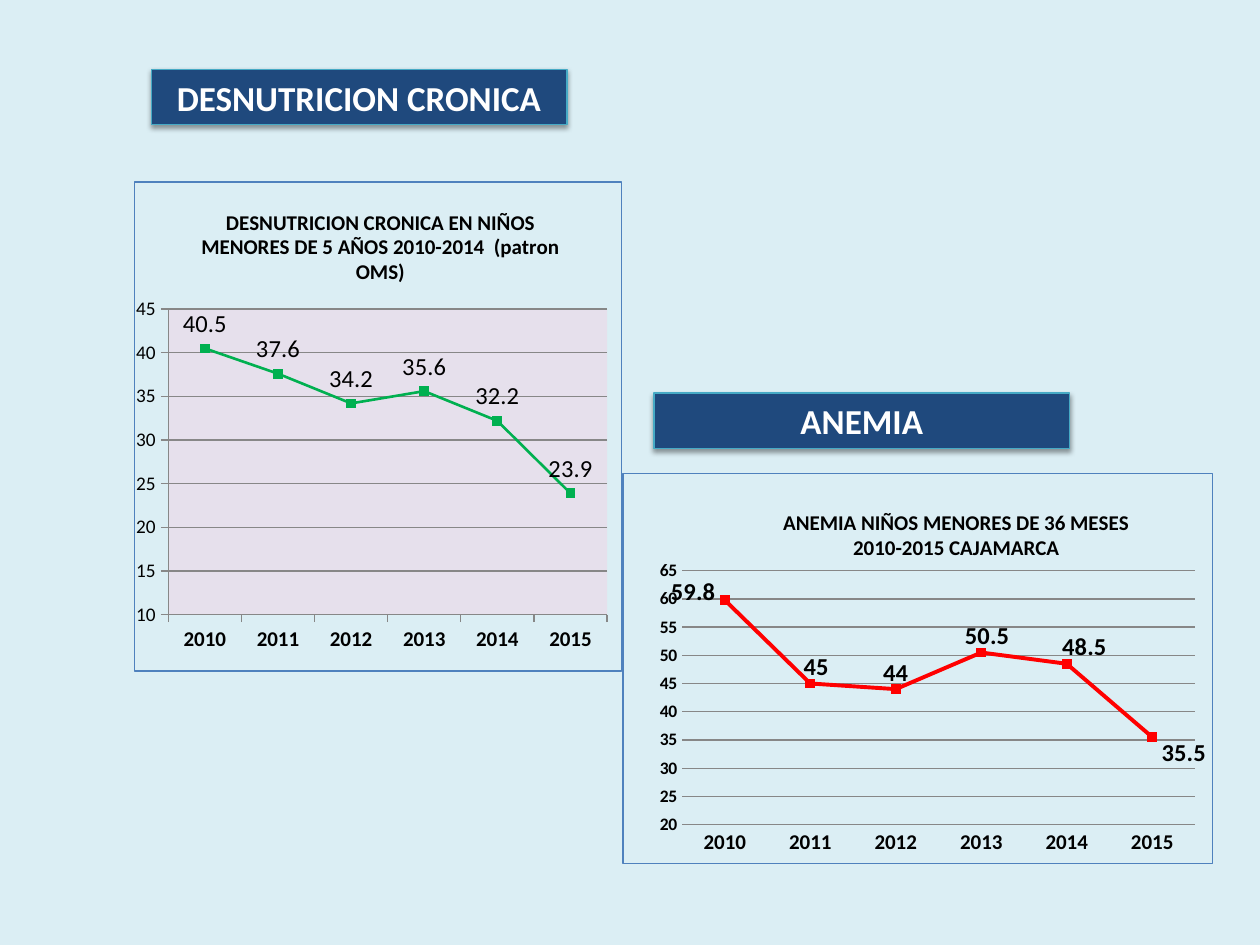
from lxml import etree
from pptx import Presentation
from pptx.chart.data import CategoryChartData
from pptx.dml.color import RGBColor
from pptx.enum.chart import (XL_CHART_TYPE, XL_LABEL_POSITION, XL_MARKER_STYLE,
                             XL_TICK_MARK)
from pptx.enum.shapes import MSO_SHAPE
from pptx.enum.text import MSO_ANCHOR, PP_ALIGN
from pptx.oxml import parse_xml
from pptx.oxml.ns import qn
from pptx.util import Inches, Pt

LINE = XL_CHART_TYPE.LINE_MARKERS
ABOVE, LEFT, RIGHT = (XL_LABEL_POSITION.ABOVE, XL_LABEL_POSITION.LEFT,
                      XL_LABEL_POSITION.RIGHT)
SQUARE = XL_MARKER_STYLE.SQUARE
OUT, NONE = XL_TICK_MARK.OUTSIDE, XL_TICK_MARK.NONE

PALE = RGBColor(0xDB, 0xEE, 0xF4)
LILAC = RGBColor(0xE6, 0xE0, 0xEC)
NAVY = RGBColor(0x1F, 0x49, 0x7D)
TEAL = RGBColor(0x46, 0xAA, 0xC5)
BLUE = RGBColor(0x4F, 0x81, 0xBD)
GREY = RGBColor(0x87, 0x87, 0x87)
GREEN = RGBColor(0x00, 0xB0, 0x50)
RED = RGBColor(0xFF, 0x00, 0x00)
BLACK = RGBColor(0, 0, 0)
WHITE = RGBColor(0xFF, 0xFF, 0xFF)

FONT = "Calibri"
YEARS = [str(year) for year in range(2010, 2016)]
SPACES = ('xmlns:a="http://schemas.openxmlformats.org/drawingml/2006/main" '
          'xmlns:c="http://schemas.openxmlformats.org/drawingml/2006/chart"')


def style(font, size, color=BLACK, bold=False):
    font.name, font.size, font.bold = FONT, Pt(size), bold
    font.color.rgb = color


def set_layout(parent, index, **parts):
    """Give a chart part a manual layout, in fractions of the chart."""
    old = parent.find(qn("c:layout"))
    if old is not None:
        parent.remove(old)
    layout = parse_xml(f"<c:layout {SPACES}><c:manualLayout/></c:layout>")
    for name, value in parts.items():
        etree.SubElement(layout[0], qn(f"c:{name}")).set("val", str(value))
    parent.insert(index, layout)


def paint(fill, line=None):
    """Return chart shape properties with an optional border."""
    border = (f'<a:ln w="{Pt(0.75)}"><a:solidFill><a:srgbClr val="{line}"/>'
              '</a:solidFill></a:ln>') if line else ""
    return parse_xml(f'<c:spPr {SPACES}><a:solidFill><a:srgbClr val="{fill}"/>'
                     f'</a:solidFill>{border}</c:spPr>')


def add_banner(slide, text, left, top):
    box = slide.shapes.add_shape(MSO_SHAPE.RECTANGLE, Inches(left), Inches(top),
                                 Inches(3.3), Inches(0.44))
    box.fill.solid()
    box.fill.fore_color.rgb = NAVY
    box.line.color.rgb = TEAL
    box.line.width = Pt(0.75)
    box.shadow.inherit = False
    effects = box._element.spPr.find(qn("a:effectLst"))
    effects.append(parse_xml(
        f'<a:outerShdw {SPACES} blurRad="{Pt(3.1)}" dist="{Pt(1.6)}" '
        'dir="5400000" rotWithShape="0"><a:srgbClr val="000000">'
        '<a:alpha val="38000"/></a:srgbClr></a:outerShdw>'))
    frame = box.text_frame
    frame.vertical_anchor = MSO_ANCHOR.MIDDLE
    para = frame.paragraphs[0]
    para.text, para.alignment = text, PP_ALIGN.CENTER
    style(para.font, 20, WHITE, True)


def add_chart(slide, box, title, corner, values, size, color, width, plot, fill):
    """Draw one bordered line chart; corner and plot are chart fractions."""
    data = CategoryChartData()
    data.categories = YEARS
    data.add_series("Series 1", values)
    chart = slide.shapes.add_chart(LINE, *map(Inches, box), data).chart
    style(chart.font, size)
    chart.has_legend = False

    frame = chart.chart_title.text_frame
    for number, text in enumerate(title):
        para = frame.add_paragraph() if number else frame.paragraphs[0]
        para.text = text
        style(para.font, 12, bold=True)
    set_layout(chart.chart_title._element, 1, xMode="edge", yMode="edge",
               x=corner[0], y=corner[1])

    space = chart._chartSpace
    area = space.chart.plotArea
    set_layout(area, 0, layoutTarget="inner", xMode="edge", yMode="edge",
               x=plot[0], y=plot[1], w=plot[2], h=plot[3])
    area.append(paint(fill))
    space.chart.addnext(paint(PALE, BLUE))

    series = chart.plots[0].series[0]
    series.smooth = False
    series.format.line.color.rgb = color
    series.format.line.width = Pt(width)
    mark = series.marker
    mark.style, mark.size = SQUARE, 5
    mark.format.fill.solid()
    mark.format.fill.fore_color.rgb = color
    mark.format.line.color.rgb = color
    return chart


def set_axes(chart, low, high, tick, bold):
    years, scale = chart.category_axis, chart.value_axis
    years.major_tick_mark = scale.major_tick_mark = tick
    style(years.tick_labels.font, 12, bold=True)
    scale.tick_labels.font.bold = bold
    scale.minimum_scale, scale.maximum_scale = low, high
    scale.major_unit = 5
    for part in (years, scale, scale.major_gridlines):
        part.format.line.color.rgb = GREY
        part.format.line.width = Pt(0.75)


def add_stunting(slide, box):
    chart = add_chart(
        slide, box,
        ["DESNUTRICION CRONICA EN NIÑOS MENORES DE 5 AÑOS 2010-2014  (patron OMS)"],
        (0.13, 0.045), (40.5, 37.6, 34.2, 35.6, 32.2, 23.9), 11, GREEN, 1.5,
        (0.07, 0.26, 0.9, 0.625), LILAC)
    set_axes(chart, 10, 45, OUT, False)
    labels = chart.plots[0].series[0].data_labels
    labels.show_value, labels.position = True, ABOVE
    style(labels.font, 14)


def add_anemia(slide, box):
    chart = add_chart(
        slide, box, ["ANEMIA NIÑOS MENORES DE 36 MESES", "2010-2015 CAJAMARCA"],
        (0.265, 0.08), (59.8, 45, 44, 50.5, 48.5, 35.5), 10, RED, 2.25,
        (0.1, 0.25, 0.87, 0.65), PALE)
    set_axes(chart, 20, 65, NONE, True)
    chart.value_axis.format.line.fill.background()
    series = chart.plots[0].series[0]
    places = [(LEFT, 0, -0.02), (ABOVE, 0.01, 0.02), (ABOVE, 0, 0.02),
              (ABOVE, 0.01, 0.02), (ABOVE, 0.03, 0.02), (RIGHT, 0, 0.04)]
    for number, (side, x, y) in enumerate(places):
        label = series.points[number].data_label
        style(label.font, 14, bold=True)
        label.position = side
        set_layout(label._get_or_add_dLbl(), 1, x=x, y=y)


def main():
    deck = Presentation()
    deck.slide_width, deck.slide_height = Inches(10), Inches(7.5)
    slide = deck.slides.add_slide(deck.slide_layouts[6])
    slide.background.fill.solid()
    slide.background.fill.fore_color.rgb = PALE
    add_stunting(slide, (1.06, 1.44, 3.88, 3.89))
    add_anemia(slide, (4.94, 3.75, 4.69, 3.11))
    add_banner(slide, "DESNUTRICION CRONICA", 1.2, 0.55)
    add_banner(slide, "ANEMIA", 5.19, 3.12)
    deck.save("out.pptx")


if __name__ == "__main__":
    main()
